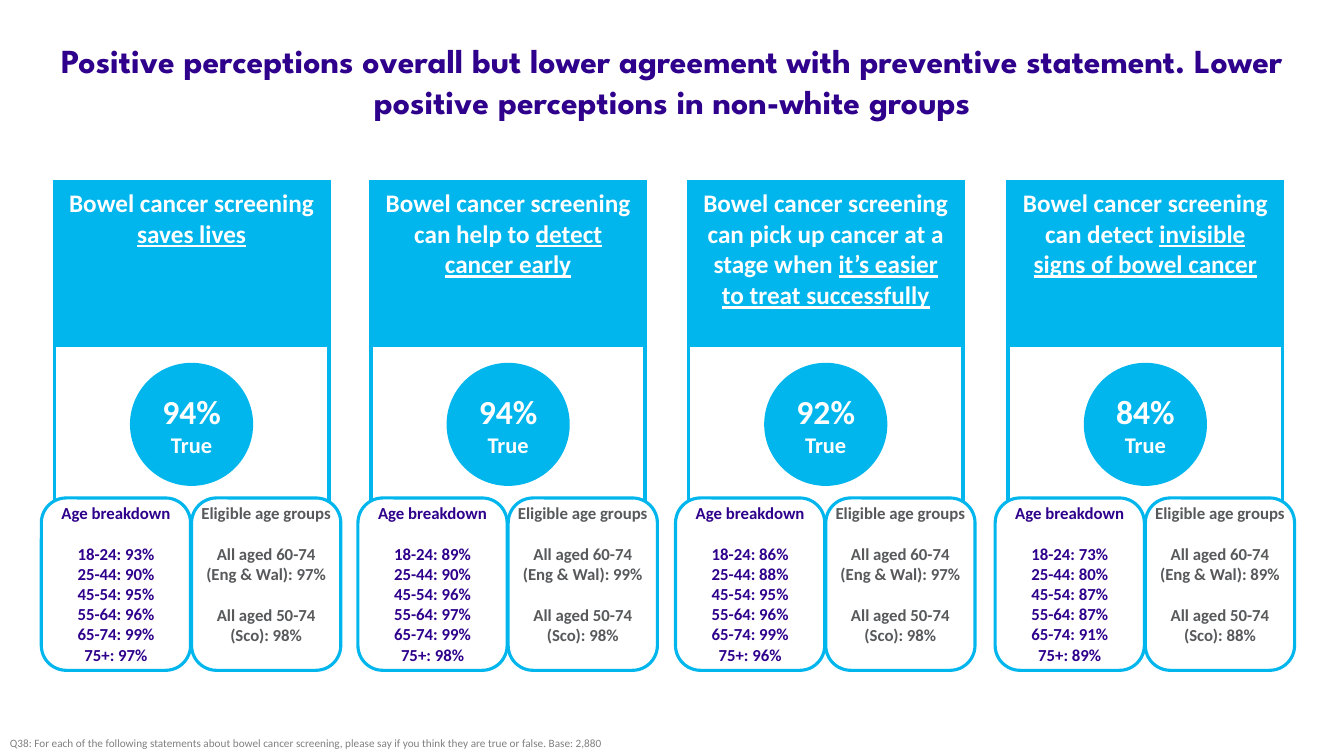
from lxml import etree
from pptx import Presentation
from pptx import util as u
from pptx.dml.color import RGBColor
from pptx.enum import shapes, text
from pptx.oxml.ns import qn

COLOURS = {"cyan": "00B6ED", "purple": "2E008B", "slate": "58595B",
           "grey": "808080", "white": "FFFFFF"}
AGES = ["18-24", "25-44", "45-54", "55-64", "65-74", "75+"]
BLANK_LINE = 14.6

# left edge, statement, underlined ending, true, by age, 60-74, 50-74
STATEMENTS = [
    (0.54, "Bowel cancer screening ", "saves lives",
     94, [93, 90, 95, 96, 99, 97], 97, 98),
    (3.68, "Bowel cancer screening can help to ", "detect cancer early",
     94, [89, 90, 96, 97, 99, 98], 99, 98),
    (6.83, "Bowel cancer screening can pick up cancer at a stage when ",
     "it’s easier to treat successfully",
     92, [86, 88, 95, 96, 99, 96], 97, 98),
    (10, "Bowel cancer screening can detect ", "invisible signs of bowel cancer",
     84, [73, 80, 87, 87, 91, 89], 89, 88),
]


def rgb(name):
    return RGBColor.from_string(COLOURS[name])


def format_runs(paragraph, size, colour, bold=True, font="Calibri", centred=True):
    paragraph.alignment = text.PP_ALIGN.CENTER if centred else text.PP_ALIGN.LEFT
    for run in paragraph.runs:
        run.font.size = u.Pt(size)
        run.font.name = font
        run.font.bold = bold
        run.font.color.rgb = rgb(colour)


def add_text(slide, box, lines, size, colour, gaps=(), **style):
    """Add a text box; the paragraphs numbered in gaps get a line of space above."""
    frame = slide.shapes.add_textbox(*map(u.Inches, box)).text_frame
    frame.word_wrap = True
    frame.text = "\n".join(lines)
    for number, paragraph in enumerate(frame.paragraphs):
        format_runs(paragraph, size, colour, **style)
        if number in gaps:
            paragraph.space_before = u.Pt(BLANK_LINE)


def add_outlined_shape(slide, kind, box, fill, width):
    shape = slide.shapes.add_shape(kind, *map(u.Inches, box))
    shape.shadow.inherit = False
    shape.fill.solid()
    shape.fill.fore_color.rgb = rgb(fill)
    shape.line.color.rgb = rgb("cyan")
    shape.line.width = u.Pt(width)
    return shape


def set_borders(cell, sides):
    properties = cell._tc.get_or_add_tcPr()
    for side in "LRTB":
        line = etree.SubElement(properties, qn(f"a:ln{side}"), w=str(u.Pt(3)))
        if side in sides:
            fill = etree.SubElement(line, qn("a:solidFill"))
            etree.SubElement(fill, qn("a:srgbClr"), val=COLOURS["cyan"])
        else:
            etree.SubElement(line, qn("a:noFill"))


def add_statement_table(slide, left, statement, ending):
    heights = [1.64, 1.48, 1.47]
    frame = slide.shapes.add_table(3, 1, u.Inches(left), u.Inches(1.8),
                                   u.Inches(2.72), u.Inches(sum(heights)))
    table = frame.table
    table.first_row = table.horz_banding = False
    for row, height, sides in zip(table.rows, heights, ["LRT", "LR", "LRB"]):
        row.height = u.Inches(height)
        set_borders(row.cells[0], sides)
        row.cells[0].fill.background()

    header = table.cell(0, 0)
    header.fill.solid()
    header.fill.fore_color.rgb = rgb("cyan")
    header.margin_left = header.margin_right = u.Inches(0.13)
    header.margin_top = header.margin_bottom = u.Inches(0.07)
    paragraph = header.text_frame.paragraphs[0]
    paragraph.text = statement
    underlined = paragraph.add_run()
    underlined.text = ending
    underlined.font.underline = True
    format_runs(paragraph, 18, "white")


def add_true_circle(slide, left, percent):
    circle = add_outlined_shape(slide, shapes.MSO_SHAPE.OVAL,
                                (left, 3.62, 1.18, 1.18), "cyan", 3)
    frame = circle.text_frame
    frame.text = f"{percent}%\nTrue"
    frame.vertical_anchor = text.MSO_ANCHOR.MIDDLE
    for paragraph, size in zip(frame.paragraphs, [24, 16]):
        format_runs(paragraph, size, "white")


def add_breakdown(slide, left, text_width, lines, colour, gaps):
    """Add a rounded panel with a text box centred over it."""
    top, width, height = 4.94, 1.48, 1.71
    add_outlined_shape(slide, shapes.MSO_SHAPE.ROUNDED_RECTANGLE,
                       (left, top, width, height), "white", 2.25)
    text_left = left + (width - text_width) / 2
    add_text(slide, (text_left, top, text_width, height), lines, 12, colour, gaps)


def main():
    presentation = Presentation()
    presentation.slide_width = u.Inches(13.33)
    presentation.slide_height = u.Inches(7.5)
    slide = presentation.slides.add_slide(presentation.slide_layouts[6])

    add_text(slide, (0.44, 0.35, 12.45, 1.45),
             ["Positive perceptions overall but lower agreement with preventive "
              "statement. Lower positive perceptions in non-white groups"],
             24, "purple", font="League Spartan")
    for left, statement, ending, true, by_age, eligible_60, eligible_50 in STATEMENTS:
        add_statement_table(slide, left, statement, ending)
        add_true_circle(slide, left + 0.77, true)
        age_lines = [f"{age}: {percent}%" for age, percent in zip(AGES, by_age)]
        add_breakdown(slide, left - 0.13, 1.75, ["Age breakdown", *age_lines],
                      "purple", gaps=[1])
        add_breakdown(slide, left + 1.36, 1.49,
                      ["Eligible age groups",
                       f"All aged 60-74 (Eng & Wal): {eligible_60}%",
                       f"All aged 50-74 (Sco): {eligible_50}%"],
                      "slate", gaps=[1, 2])
    add_text(slide, (0, 7.26, 8.65, 0.24),
             ["Q38: For each of the following statements about bowel cancer screening, "
              "please say if you think they are true or false. Base: 2,880"],
             8, "grey", bold=False, centred=False)

    presentation.save("out.pptx")


if __name__ == "__main__":
    main()
